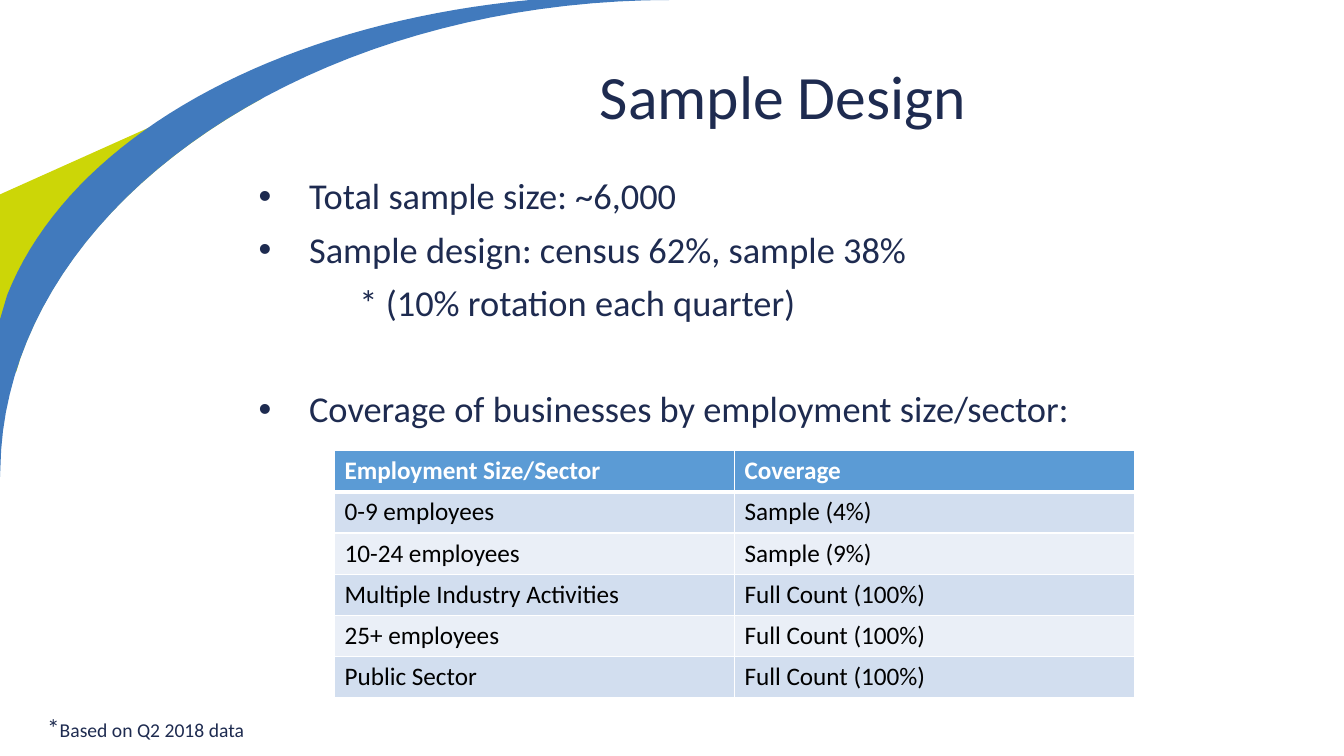
from lxml.etree import SubElement
from pptx import Presentation
from pptx.dml.color import RGBColor
from pptx.enum.text import MSO_ANCHOR as Anchor, PP_ALIGN as Align
from pptx.oxml.ns import qn
from pptx.util import Cm, Pt

NAVY = RGBColor(0x1E, 0x2B, 0x50)
BLUE = RGBColor(0x41, 0x7A, 0xBD)
LIME = RGBColor(0xCC, 0xD6, 0x07)
HEAD = RGBColor(0x5B, 0x9B, 0xD5)
BANDS = [RGBColor(0xD2, 0xDE, 0xEF), RGBColor(0xEA, 0xEF, 0xF7)]
WHITE = RGBColor(0xFF, 0xFF, 0xFF)
BLACK = RGBColor(0, 0, 0)
FONT = "Calibri"

TITLE = "Sample Design"
# text, bulleted, space before in points
POINTS = [
    ("Total sample size: ~6,000", True, 0),
    ("Sample design: census 62%, sample 38%", True, 10),
    ("* (10% rotation each quarter)", False, 10),
    ("Coverage of businesses by employment size/sector:", True, 48),
]
ROWS = [
    ("Employment Size/Sector", "Coverage"),
    ("0-9 employees", "Sample (4%)"),
    ("10-24 employees", "Sample (9%)"),
    ("Multiple Industry Activities", "Full Count (100%)"),
    ("25+ employees", "Full Count (100%)"),
    ("Public Sector", "Full Count (100%)"),
]
NOTE = [("*", 18), ("Based on Q2 2018 data", 14)]

# outlines in cm: a pair is a corner, a triple of pairs is a Bézier curve
LEAF = [(6.4, 2.03), (6.6, 2.49), (6.45, 2.57),
        ((3.56, 4.19), (1.42, 6.43), (0.51, 9.04)),
        (0.41, 9.37), (0, 8.43), (0, 4.9)]
SWOOSH = [(0, 8.05), (0.18, 7.44),
          ((1.75, 3.48), (6.91, 0.61), (13.36, 0)),
          (18.19, 0), (16.94, 0),
          ((7.87, 0), (0.48, 5.03), (0.03, 11.33)), (0, 12.04)]


def trace(outline, steps=40):
    """Turn corners and curves into a plain list of points."""
    pts = []
    for part in outline:
        if not isinstance(part[0], tuple):
            pts.append(part)
            continue
        ctrl = (pts[-1], *part)
        for i in range(1, steps + 1):
            t = i / steps
            u = 1 - t
            mix = (u ** 3, 3 * u * u * t, 3 * u * t * t, t ** 3)
            pts.append(tuple(sum(m * c[k] for m, c in zip(mix, ctrl))
                             for k in (0, 1)))
    return pts


def draw(slide, outline, color):
    pts = [(Cm(x), Cm(y)) for x, y in trace(outline)]
    pen = slide.shapes.build_freeform(*pts[0])
    pen.add_line_segments(pts[1:], close=True)
    shape = pen.convert_to_shape()
    shape.shadow.inherit = False
    shape.fill.solid()
    shape.fill.fore_color.rgb = color
    shape.line.fill.background()


def style(run, size, color=NAVY, bold=False):
    font = run.font
    font.name, font.size, font.bold = FONT, Pt(size), bold
    font.color.rgb = color


def add_box(slide, *place):
    frame = slide.shapes.add_textbox(*map(Cm, place)).text_frame
    frame.word_wrap = True
    return frame


def add_title(slide):
    frame = add_box(slide, 7.95, 0.84, 23.57, 3.33)
    frame.vertical_anchor = Anchor.MIDDLE
    frame.text = TITLE
    para = frame.paragraphs[0]
    para.alignment = Align.CENTER
    para.line_spacing = 0.9
    style(para.runs[0], 44)


def add_points(slide):
    frame = add_box(slide, 3.73, 4.37, 27.81, 14)
    frame.text = "\n".join(text for text, _, _ in POINTS)
    for para, (_, dot, gap) in zip(frame.paragraphs, POINTS):
        props = para._p.get_or_add_pPr()
        props.set("marL", str(Cm(3.81 if dot else 5.08)))
        props.set("indent", str(Cm(-1.27 if dot else 0)))
        if dot:
            SubElement(props, qn("a:buFont"), typeface="Arial")
            SubElement(props, qn("a:buChar"), char="•")
        else:
            SubElement(props, qn("a:buNone"))
        para.line_spacing = 0.9
        para.space_before = Pt(gap)
        style(para.runs[0], 26)


def edge(cell, side, width):
    line = SubElement(cell._tc.get_or_add_tcPr(), qn("a:ln" + side),
                      w=str(Pt(width)))
    fill = SubElement(line, qn("a:solidFill"))
    SubElement(fill, qn("a:srgbClr"), val=str(WHITE))


def add_grid(slide):
    high = 1.04
    table = slide.shapes.add_table(
        len(ROWS), 2, Cm(8.43), Cm(11.35), Cm(20.16),
        Cm(high * len(ROWS))).table
    for col in table.columns:
        col.width = Cm(10.08)
    for r, row in enumerate(ROWS):
        table.rows[r].height = Cm(high)
        top = r == 0
        for c, text in enumerate(row):
            cell = table.cell(r, c)
            for side in "LRTB":
                thick = (top and side == "B") or (r == 1 and side == "T")
                edge(cell, side, 3 if thick else 1)
            cell.fill.solid()
            cell.fill.fore_color.rgb = HEAD if top else BANDS[(r - 1) % 2]
            cell.text_frame.text = text
            style(cell.text_frame.paragraphs[0].runs[0], 18,
                  WHITE if top else BLACK, top)


def add_note(slide):
    para = add_box(slide, 0.94, 17.83, 8.84, 1.02).paragraphs[0]
    for text, size in NOTE:
        run = para.add_run()
        run.text = text
        style(run, size)


def main():
    deck = Presentation()
    deck.slide_width, deck.slide_height = Cm(33.87), Cm(19.05)
    slide = deck.slides.add_slide(deck.slide_layouts[6])
    draw(slide, LEAF, LIME)
    draw(slide, SWOOSH, BLUE)
    add_title(slide)
    add_points(slide)
    add_grid(slide)
    add_note(slide)
    deck.save("out.pptx")


if __name__ == "__main__":
    main()
